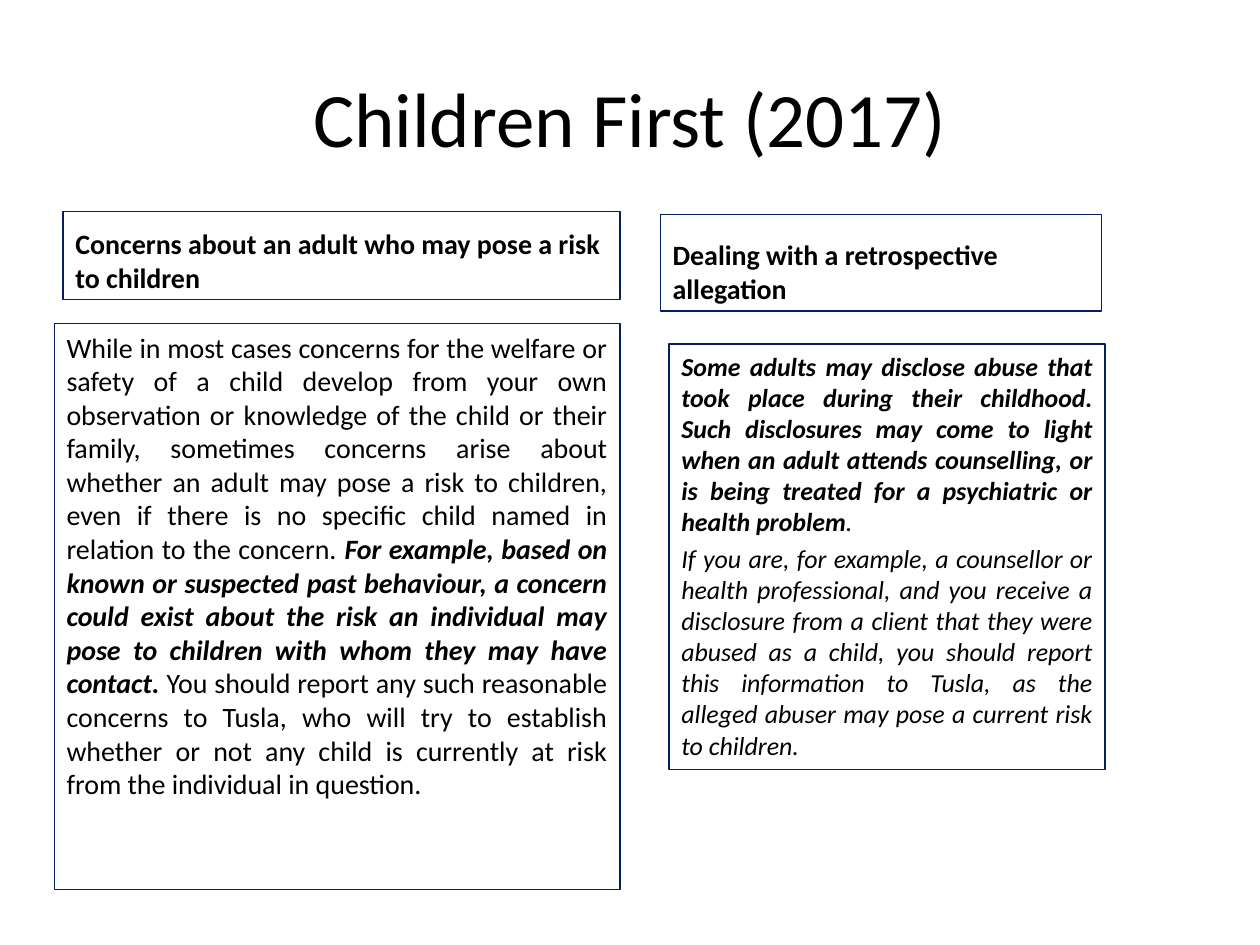
"""Build the Children First (2017) slide with two headed text columns."""
from pptx import Presentation
from pptx.dml.color import RGBColor
from pptx.enum.text import MSO_ANCHOR, PP_ALIGN
from pptx.util import Inches, Pt

COLORS = {"text": "000000", "border": "002060", "background": "FFFFFF"}
FONT = "Calibri"


def add_run(paragraph, text, size, bold=False, italic=False):
    run = paragraph.add_run()
    run.text = text
    run.font.name = FONT
    run.font.size = Pt(size)
    run.font.bold = bold
    run.font.italic = italic
    run.font.color.rgb = RGBColor.from_string(COLORS["text"])


def add_box(slide, position, size, anchor, alignment, paragraphs):
    box = slide.shapes.add_textbox(*[Inches(length) for length in position])
    box.line.color.rgb = RGBColor.from_string(COLORS["border"])
    box.line.width = Pt(0.75)
    frame = box.text_frame
    frame.word_wrap = True
    frame.vertical_anchor = anchor
    for index, runs in enumerate(paragraphs):
        paragraph = frame.add_paragraph() if index else frame.paragraphs[0]
        paragraph.alignment = alignment
        paragraph.space_before = Pt(round(size * 0.24, 1))
        for text, bold, italic in runs:
            add_run(paragraph, text, size, bold, italic)


presentation = Presentation()
presentation.slide_width = Inches(10)
presentation.slide_height = Inches(7.5)
slide = presentation.slides.add_slide(presentation.slide_layouts[5])
slide.background.fill.solid()
slide.background.fill.fore_color.rgb = RGBColor.from_string(COLORS["background"])

title = slide.shapes.title
title.left, title.top = Inches(0.5), Inches(0.3)
title.width, title.height = Inches(9), Inches(1.25)
title.text_frame.vertical_anchor = MSO_ANCHOR.MIDDLE
title_paragraph = title.text_frame.paragraphs[0]
title_paragraph.alignment = PP_ALIGN.CENTER
add_run(title_paragraph, "Children First (2017)", 44)

headings = [
    ((0.5, 1.68, 4.42, 0.7), "Concerns about an adult who may pose a risk to children"),
    ((5.24, 1.7, 3.5, 0.77), "Dealing with a retrospective allegation"),
]
for position, text in headings:
    add_box(slide, position, 16, MSO_ANCHOR.BOTTOM, PP_ALIGN.LEFT, [[(text, True, False)]])

concerns = [[
    ("While in most cases concerns for the welfare or safety of a child develop from "
     "your own observation or knowledge of the child or their family, sometimes "
     "concerns arise about whether an adult may pose a risk to children, even if there "
     "is no specific child named in relation to the concern. ", False, False),
    ("For example, based on known or suspected past behaviour, a concern could exist "
     "about the risk an individual may pose to children with whom they may have "
     "contact. ", True, True),
    ("You should report any such reasonable concerns to Tusla, who will try to "
     "establish whether or not any child is currently at risk from the individual in "
     "question.", False, False),
]]
allegations = [
    [
        ("Some adults may disclose abuse that took place during their childhood. Such "
         "disclosures may come to light when an adult attends counselling, or is being "
         "treated for a psychiatric or health problem", True, True),
        (". ", False, True),
    ],
    [
        ("If you are, for example, a counsellor or health professional, and you receive "
         "a disclosure from a client that they were abused as a child, you should report "
         "this information to Tusla, as the alleged abuser may pose a current risk to "
         "children. ", False, True),
    ],
]
bodies = [
    ((0.43, 2.57, 4.49, 4.49), 16, concerns),
    ((5.31, 2.73, 3.46, 3.38), 14.8, allegations),
]
for position, size, paragraphs in bodies:
    add_box(slide, position, size, MSO_ANCHOR.TOP, PP_ALIGN.JUSTIFY, paragraphs)

presentation.save("out.pptx")
